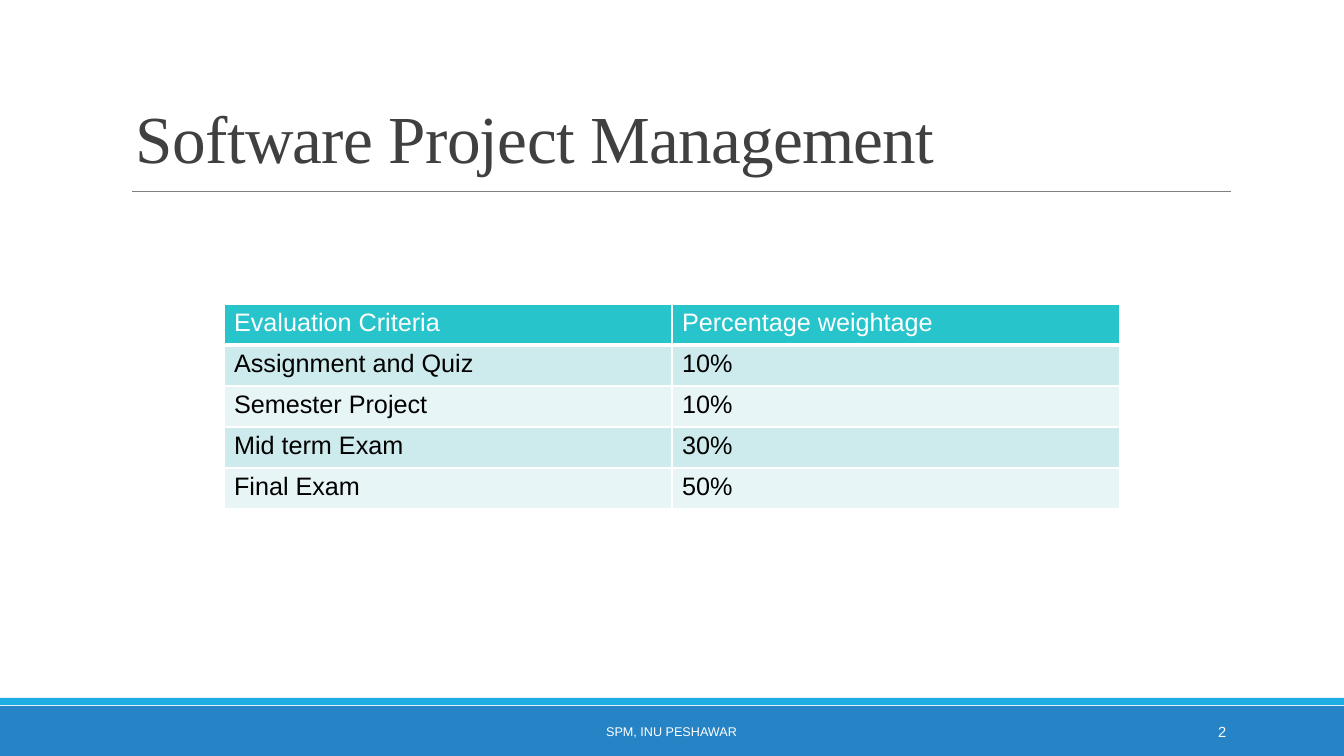
from lxml.etree import SubElement
from pptx import Presentation
from pptx.dml.color import RGBColor
from pptx.enum.shapes import MSO_CONNECTOR as Connector, MSO_SHAPE as Shape
from pptx.enum.text import MSO_ANCHOR as Anchor, PP_ALIGN as Align
from pptx.oxml.ns import qn
from pptx.util import Pt

PAGE_WIDTH, PAGE_HEIGHT = 1344, 756
SCALE = 6858000 / PAGE_HEIGHT
COLORS = {
    "white": "FFFFFF", "black": "000000", "title": "404040", "rule": "808080",
    "footer": "2683C6", "stripe": "1CADE4",
    "header": "28C4CC", "odd": "CDEAEC", "even": "E8F5F6",
}
CRITERIA = [
    ("Evaluation Criteria", "Percentage weightage"),
    ("Assignment and Quiz", "10%"),
    ("Semester Project", "10%"),
    ("Mid term Exam", "30%"),
    ("Final Exam", "50%"),
]


def px(*lengths):
    return [round(length * SCALE) for length in lengths]


def color(name):
    return RGBColor.from_string(COLORS[name])


def add_span(para, text, size, ink, font="Arial"):
    span = para.add_run()
    span.text = text
    span.font.size = Pt(size)
    span.font.name = font
    span.font.color.rgb = color(ink)
    return span


def add_text_box(page, box, anchor, align):
    frame = page.shapes.add_textbox(*px(*box)).text_frame
    frame.word_wrap = True
    frame.vertical_anchor = anchor
    para = frame.paragraphs[0]
    para.alignment = align
    return para


def add_bar(page, box, fill):
    bar = page.shapes.add_shape(Shape.RECTANGLE, *px(*box))
    bar.shadow.inherit = False
    bar.fill.solid()
    bar.fill.fore_color.rgb = color(fill)
    bar.line.fill.background()


def add_border(cell, side, width):
    border = SubElement(cell._tc.get_or_add_tcPr(), qn(f"a:ln{side}"), w=str(Pt(width)))
    fill = SubElement(border, qn("a:solidFill"))
    SubElement(fill, qn("a:srgbClr"), val=COLORS["white"])


def draw_heading(page, box):
    left, top, width, height = box
    # Title
    para = add_text_box(page, box, Anchor.BOTTOM, Align.LEFT)
    para.line_spacing = 0.85
    span = add_span(para, "Software Project Management", 48, "title", "Times New Roman")
    span.font._element.set("spc", "-50")
    # Rule under the title
    rule_y = top + height + 9
    rule = page.shapes.add_connector(
        Connector.STRAIGHT, *px(left + 6, rule_y, left + width - 54, rule_y))
    rule.line.color.rgb = color("rule")
    rule.line.width = Pt(0.5)
    SubElement(rule._element.spPr, qn("a:effectLst"))


def draw_criteria(page, box):
    left, top, width, height = box
    table = page.shapes.add_table(len(CRITERIA), 2, *px(*box)).table
    for column in table.columns:
        column.width = px(width / 2)[0]
    for index, (row, texts) in enumerate(zip(table.rows, CRITERIA)):
        row.height = px(height / len(CRITERIA))[0]
        is_header = index == 0
        fill = "header" if is_header else ("odd" if index % 2 else "even")
        for cell, text in zip(row.cells, texts):
            # Borders come before the fill in the cell properties
            for side in "LRTB":
                add_border(cell, side, 3 if is_header and side == "B" else 1)
            cell.fill.solid()
            cell.fill.fore_color.rgb = color(fill)
            add_span(cell.text_frame.paragraphs[0], text, 18,
                     "white" if is_header else "black")


def draw_footer(page, box):
    left, top, width, height = box
    # Bar with a stripe along its top edge
    add_bar(page, box, "footer")
    add_bar(page, (left, top - 8, width, 7), "stripe")
    # Course name and page number
    para = add_text_box(page, (left + 406, top + 6, 531, 40), Anchor.MIDDLE, Align.CENTER)
    add_span(para, "SPM, INU PESHAWAR", 9, "white")
    para = add_text_box(page, (left + 1092, top + 6, 144, 40), Anchor.MIDDLE, Align.RIGHT)
    add_span(para, "2", 10.5, "white")


def main():
    deck = Presentation()
    deck.slide_width, deck.slide_height = px(PAGE_WIDTH, PAGE_HEIGHT)
    page = deck.slides.add_slide(deck.slide_layouts[6])
    page.background.fill.solid()
    page.background.fill.fore_color.rgb = color("white")
    draw_footer(page, (0, 706, PAGE_WIDTH, 50))
    draw_heading(page, (126, 36, 1159, 146))
    draw_criteria(page, (224, 304, 896, 205))
    deck.save("out.pptx")


if __name__ == "__main__":
    main()
